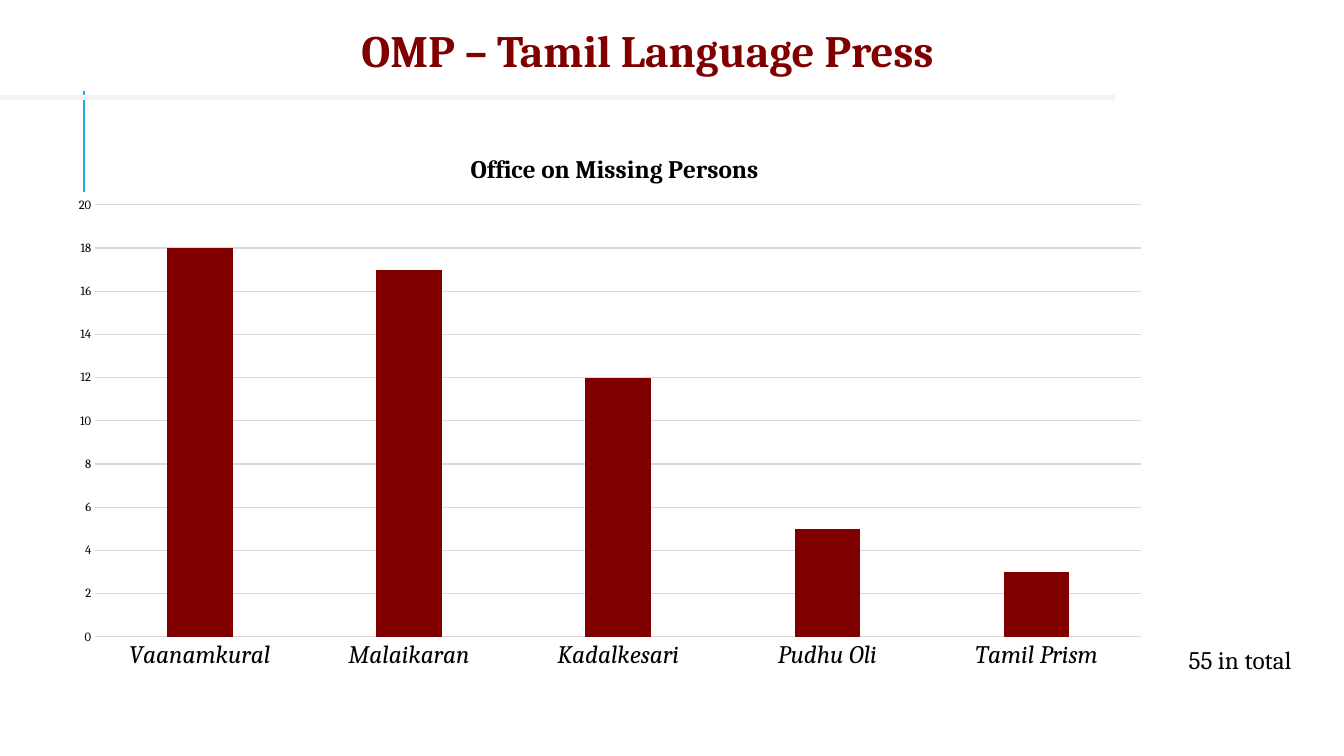
from pptx import Presentation
from pptx.chart.data import CategoryChartData
from pptx.dml.color import RGBColor
from pptx.enum.chart import XL_CHART_TYPE, XL_TICK_MARK
from pptx.enum.shapes import MSO_CONNECTOR, MSO_SHAPE
from pptx.enum.text import MSO_ANCHOR, PP_ALIGN
from pptx.oxml import parse_xml
from pptx.oxml.ns import nsdecls, qn
from pptx.util import Inches, Pt

TITLE = "OMP – Tamil Language Press"
CHART_TITLE = "Office on Missing Persons"
TOTAL = "55 in total"
ARTICLES = {
    "Vaanamkural": 18,
    "Malaikaran": 17,
    "Kadalkesari": 12,
    "Pudhu Oli": 5,
    "Tamil Prism": 3,
}

MAROON = RGBColor(0x80, 0x00, 0x00)
BLACK = RGBColor(0x00, 0x00, 0x00)
GRID_GREY = RGBColor(0xD9, 0xD9, 0xD9)
BAR_GREY = RGBColor(0xF2, 0xF2, 0xF2)
ACCENT_BLUE = RGBColor(0x1C, 0xAD, 0xE4)
FONT = "Cambria"


def style(font, size, color=BLACK, bold=False, italic=False):
    font.name, font.size, font.bold, font.italic = FONT, Pt(size), bold, italic
    font.color.rgb = color


def grey_line(line):
    line.color.rgb = GRID_GREY
    line.width = Pt(0.75)


def place(element, position, target="", **shares):
    """Give a chart part a manual layout in shares of the chart's size."""
    for old in element.findall(qn("c:layout")):
        element.remove(old)
    inner = f'<c:layoutTarget val="{target}"/>' if target else ""
    modes = '<c:xMode val="edge"/><c:yMode val="edge"/>'
    values = "".join(f'<c:{key} val="{share}"/>' for key, share in shares.items())
    element.insert(position, parse_xml(
        f'<c:layout {nsdecls("c")}><c:manualLayout>{inner}{modes}{values}'
        "</c:manualLayout></c:layout>"))


def add_rules(page):
    upright = page.shapes.add_connector(
        MSO_CONNECTOR.STRAIGHT, Inches(0.83), Inches(1.9), Inches(0.83), Inches(0.9))
    upright.line.color.rgb = ACCENT_BLUE
    upright.line.width = Pt(1.5)
    upright._element.spPr.append(parse_xml(f'<a:effectLst {nsdecls("a")}/>'))
    bar = page.shapes.add_shape(
        MSO_SHAPE.RECTANGLE, 0, Inches(0.94), Inches(11.06), Inches(0.05))
    bar.shadow.inherit = False
    bar.fill.solid()
    bar.fill.fore_color.rgb = BAR_GREY
    bar.line.fill.background()


def add_title(page):
    title = page.shapes.title
    title.left, title.top = Inches(1.3), Inches(0.17)
    title.width, title.height = Inches(10.25), Inches(0.64)
    frame = title.text_frame
    frame.text = TITLE
    frame.vertical_anchor = MSO_ANCHOR.MIDDLE
    frame.paragraphs[0].alignment = PP_ALIGN.CENTER
    style(frame.paragraphs[0].runs[0].font, 32, MAROON, bold=True)


def add_article_chart(page):
    data = CategoryChartData()
    data.categories = list(ARTICLES)
    data.add_series("Series 1", list(ARTICLES.values()))
    chart = page.shapes.add_chart(
        XL_CHART_TYPE.COLUMN_CLUSTERED, Inches(0.56), Inches(1.25),
        Inches(10.98), Inches(5.51), data).chart
    style(chart.font, 10)
    chart.has_legend = False

    chart.has_title = True
    heading = chart.chart_title
    heading.text_frame.text = CHART_TITLE
    style(heading.text_frame.paragraphs[0].runs[0].font, 18, bold=True)
    heading.include_in_layout = False
    place(heading._element, 1, x=0.37, y=0.04)
    plot_area = chart._chartSpace.chart.plotArea
    place(plot_area, 0, "inner", x=0.035, y=0.142, w=0.945, h=0.778)

    plot = chart.plots[0]
    plot.gap_width, plot.overlap = 219, -27
    plot.vary_by_categories = False
    columns = plot.series[0].format
    columns.fill.solid()
    columns.fill.fore_color.rgb = MAROON

    papers, counts = chart.category_axis, chart.value_axis
    for axis in (papers, counts):
        axis.major_tick_mark = axis.minor_tick_mark = XL_TICK_MARK.NONE
    style(papers.tick_labels.font, 18, italic=True)
    grey_line(papers.format.line)
    style(counts.tick_labels.font, 9)
    counts.format.line.fill.background()
    counts.minimum_scale, counts.maximum_scale, counts.major_unit = 0, 20, 2
    counts.has_major_gridlines = True
    grey_line(counts.major_gridlines.format.line)


def add_total(page):
    box = page.shapes.add_textbox(
        Inches(11.69), Inches(6.34), Inches(1.64), Inches(0.4))
    box.text_frame.word_wrap = True
    box.text_frame.text = TOTAL
    style(box.text_frame.paragraphs[0].runs[0].font, 18)


def main():
    deck = Presentation()
    deck.slide_width, deck.slide_height = Inches(13.33), Inches(7.5)
    page = deck.slides.add_slide(deck.slide_layouts[5])
    add_rules(page)
    add_title(page)
    add_article_chart(page)
    add_total(page)
    deck.save("out.pptx")


if __name__ == "__main__":
    main()
